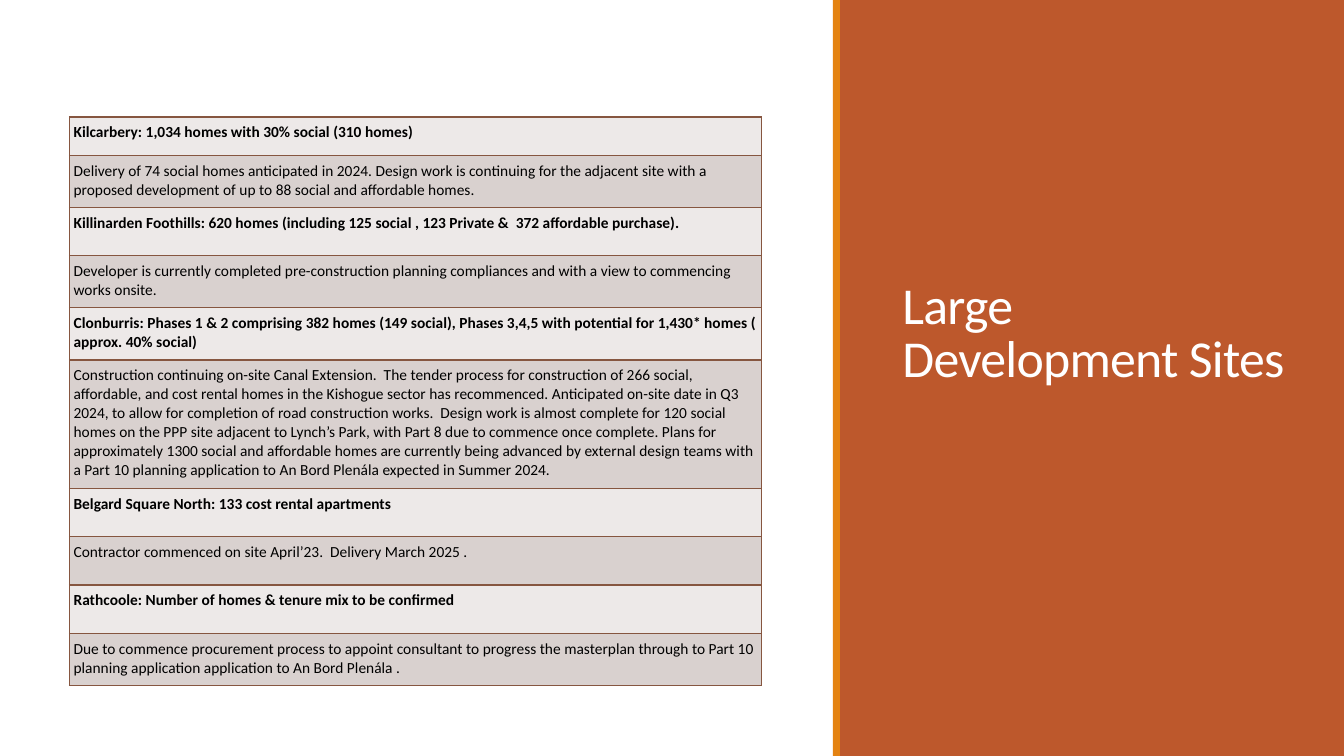
from dataclasses import dataclass

from lxml.etree import SubElement
from pptx import Presentation
from pptx.dml.color import RGBColor
from pptx.enum.shapes import MSO_SHAPE
from pptx.enum.text import MSO_ANCHOR, MSO_AUTO_SIZE, PP_ALIGN
from pptx.oxml.ns import qn
from pptx.util import Inches, Pt

# Content: each site has a heading and its progress
TITLE = "Large Development Sites"
SITES = [
    ("Kilcarbery: 1,034 homes with 30% social (310 homes)",
     "Delivery of 74 social homes anticipated in 2024. Design work is continuing for the "
     "adjacent site with a proposed development of up to 88 social and affordable homes."),
    ("Killinarden Foothills: 620 homes (including 125 social , 123 Private &  372 affordable purchase).",
     "Developer is currently completed pre-construction planning compliances and with a view "
     "to commencing works onsite."),
    ("Clonburris: Phases 1 & 2 comprising 382 homes (149 social), Phases 3,4,5 with potential "
     "for 1,430* homes ( approx. 40% social)",
     "Construction continuing on-site Canal Extension.  The tender process for construction of "
     "266 social, affordable, and cost rental homes in the Kishogue sector has recommenced. "
     "Anticipated on-site date in Q3 2024, to allow for completion of road construction works.  "
     "Design work is almost complete for 120 social homes on the PPP site adjacent to Lynch’s "
     "Park, with Part 8 due to commence once complete. Plans for approximately 1300 social and "
     "affordable homes are currently being advanced by external design teams with a Part 10 "
     "planning application to An Bord Plenála expected in Summer 2024."),
    ("Belgard Square North: 133 cost rental apartments",
     "Contractor commenced on site April’23.  Delivery March 2025 ."),
    ("Rathcoole: Number of homes & tenure mix to be confirmed",
     "Due to commence procurement process to appoint consultant to progress the masterplan "
     "through to Part 10 planning application application to An Bord Plenála ."),
]


@dataclass(frozen=True)
class Theme:
    font: str = "Calibri"
    panel: str = "BD582C"
    stripe: str = "E48312"
    heading_fill: str = "EDE9E8"
    progress_fill: str = "D9D1CF"
    border: str = "865640"
    dark: str = "000000"
    light: str = "FFFFFF"
    title_size: float = 37
    cell_size: float = 11


THEME = Theme()

# Layout in inches
WIDTH, HEIGHT = 13.33, 7.5
PANEL_LEFT, STRIPE_WIDTH = 8.33, 0.07
TITLE_BOX = (8.85, 0.7, 4, 3.2)
TABLE_BOX = (0.69, 1.16, 6.86, 5.57)
FIRST_ROWS, ROW_HEIGHT = [0.38, 0.33], 0.48
CELL_MARGINS = (0.04, 0.06, 0.04, 0.08)


def write(frame, text, size, color, bold=False, line_spacing=None, space_after=None):
    para = frame.paragraphs[0]
    para.alignment = PP_ALIGN.LEFT
    para.line_spacing = line_spacing
    if space_after is not None:
        para.space_after = Pt(space_after)
    span = para.add_run()
    span.text = text
    span.font.name, span.font.size, span.font.bold = THEME.font, Pt(size), bold
    span.font.color.rgb = RGBColor.from_string(color)
    return span


def add_band(page, left, width, color):
    band = page.shapes.add_shape(MSO_SHAPE.RECTANGLE, Inches(left), 0, Inches(width), Inches(HEIGHT))
    band.shadow.inherit = False
    band.fill.solid()
    band.fill.fore_color.rgb = RGBColor.from_string(color)
    band.line.fill.background()


def add_title(page):
    title = page.shapes.title
    title.left, title.top, title.width, title.height = map(Inches, TITLE_BOX)
    frame = title.text_frame
    frame.word_wrap, frame.auto_size = True, MSO_AUTO_SIZE.NONE
    frame.vertical_anchor = MSO_ANCHOR.BOTTOM
    span = write(frame, TITLE, THEME.title_size, THEME.light, line_spacing=0.85, space_after=6)
    span.font._element.set("spc", "-50")
    # Bring the title in front of the panel
    title.element.getparent().append(title.element)


def style_cell(cell, fill):
    cell.margin_left, cell.margin_top, cell.margin_right, cell.margin_bottom = map(Inches, CELL_MARGINS)
    cell.fill.solid()
    cell.fill.fore_color.rgb = RGBColor.from_string(fill)
    properties = cell._tc.get_or_add_tcPr()
    for index, side in enumerate(("a:lnL", "a:lnR", "a:lnT", "a:lnB")):
        edge = SubElement(properties, qn(side), w=str(Pt(1)))
        SubElement(SubElement(edge, qn("a:solidFill")), qn("a:srgbClr"), val=THEME.border)
        properties.insert(index, edge)


def add_sites(page):
    lines = [line for site in SITES for line in site]
    holder = page.shapes.add_table(len(lines), 1, *map(Inches, TABLE_BOX))
    table = holder.table
    table.first_row = table.horz_banding = False
    heights = FIRST_ROWS + [ROW_HEIGHT] * (len(lines) - len(FIRST_ROWS))
    for number, (text, height) in enumerate(zip(lines, heights)):
        heading = number % 2 == 0
        table.rows[number].height = Inches(height)
        cell = table.cell(number, 0)
        style_cell(cell, THEME.heading_fill if heading else THEME.progress_fill)
        write(cell.text_frame, text, THEME.cell_size, THEME.dark, bold=heading)
    holder.height = Inches(TABLE_BOX[3])


def main():
    deck = Presentation()
    deck.slide_width, deck.slide_height = Inches(WIDTH), Inches(HEIGHT)
    page = deck.slides.add_slide(deck.slide_layouts[5])

    # Right-hand panel with its stripe
    add_band(page, PANEL_LEFT, WIDTH - PANEL_LEFT, THEME.panel)
    add_band(page, PANEL_LEFT - STRIPE_WIDTH, STRIPE_WIDTH, THEME.stripe)
    add_title(page)
    add_sites(page)
    deck.save("out.pptx")


if __name__ == "__main__":
    main()
